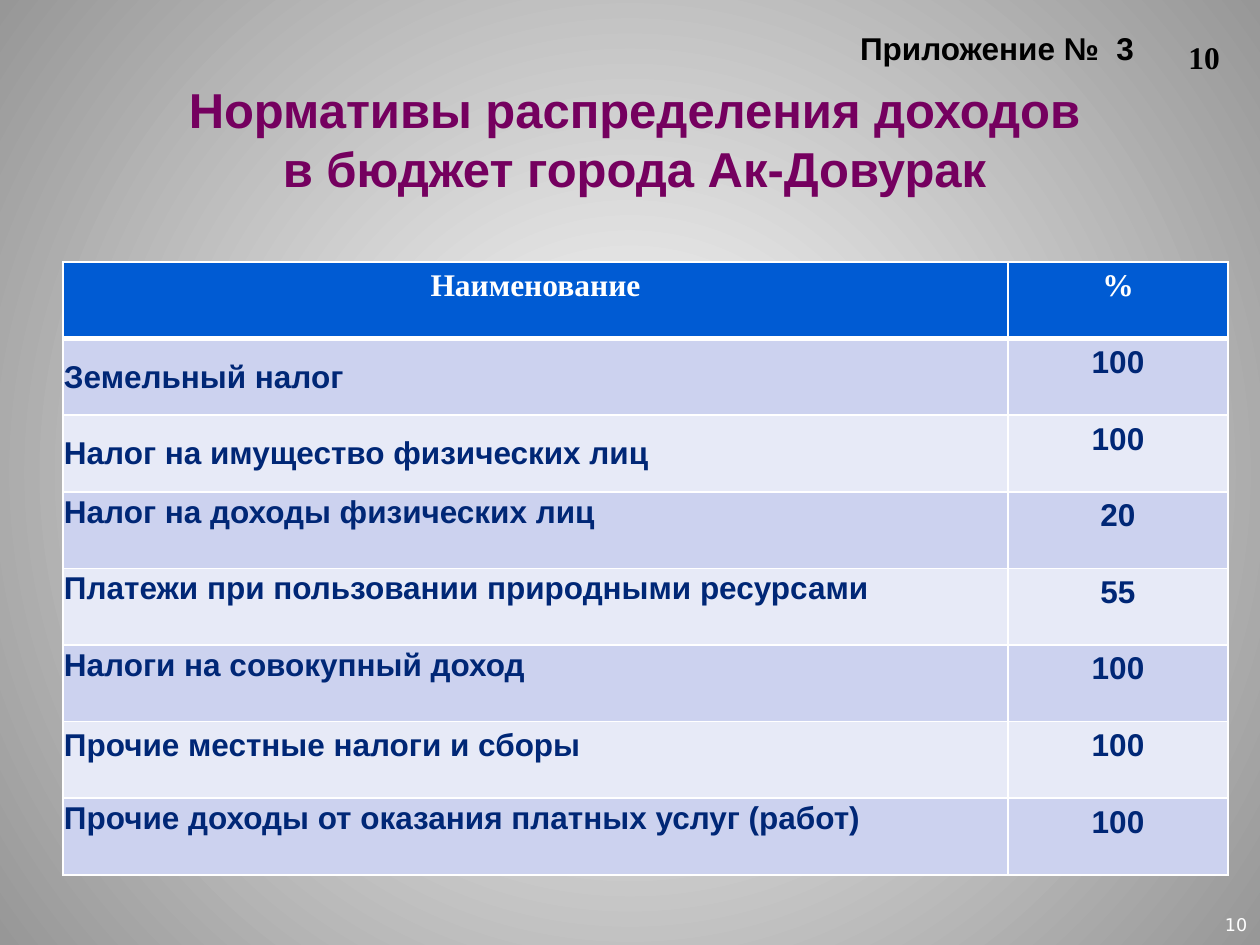
from lxml.etree import SubElement
from pptx import Presentation
from pptx.dml.color import RGBColor
from pptx.enum.text import MSO_ANCHOR, PP_ALIGN
from pptx.oxml import parse_xml
from pptx.oxml.ns import nsdecls, qn
from pptx.util import Emu, Pt

PX = 914400 / 126
BLACK = RGBColor(0x00, 0x00, 0x00)
WHITE = RGBColor(0xFF, 0xFF, 0xFF)
GRAY = RGBColor(0x97, 0x97, 0x97)
PLUM = RGBColor(0x75, 0x00, 0x5F)
NAVY = RGBColor(0x00, 0x27, 0x76)
BLUE = RGBColor(0x00, 0x5B, 0xD3)
BANDS = [RGBColor(0xCC, 0xD2, 0xEF), RGBColor(0xE7, 0xEA, 0xF7)]
MIDDLE, TOP = MSO_ANCHOR.MIDDLE, MSO_ANCHOR.TOP

HEADER = ("Наименование", "%")
INCOMES = [
    ("Земельный налог", "100", MIDDLE, 1),
    ("Налог на имущество физических лиц", "100", MIDDLE, 1),
    ("Налог на доходы физических лиц", "20", TOP, 3),
    ("Платежи при пользовании природными ресурсами", "55", TOP, 3),
    ("Налоги на совокупный доход", "100", TOP, 3),
    ("Прочие местные налоги и сборы", "100", TOP, 6),
    ("Прочие доходы от оказания платных услуг (работ)", "100", TOP, 3),
]


def px(n):
    """Convert pixels to EMU."""
    return Emu(round(n * PX))


def style(tf, font, size, color, align=PP_ALIGN.LEFT, bold=True):
    """Format the only paragraph of a text frame."""
    p = tf.paragraphs[0]
    p.alignment = align
    for r in p.runs:
        r.font.name, r.font.size, r.font.bold = font, Pt(size), bold
        r.font.color.rgb = color


def paint_background(s):
    """Fill the background with a gradient from the centre outwards."""
    fill = s.background.fill
    fill.gradient()
    for stop, color in zip(fill.gradient_stops, (WHITE, GRAY)):
        stop.color.rgb = color
    grad = next(s.element.iter(qn("a:gradFill")))
    grad.remove(grad.find(qn("a:lin")))
    circle = SubElement(grad, qn("a:path"), path="circle")
    SubElement(circle, qn("a:fillToRect"), l="50000", t="50000", r="50000", b="50000")


def add_text(s, box, text, font, size, color, align=PP_ALIGN.LEFT, bold=True, inset=True):
    """Add a wrapped text box, with or without default insets."""
    tf = s.shapes.add_textbox(*map(px, box)).text_frame
    tf.word_wrap = True
    if not inset:
        tf.margin_left = tf.margin_top = tf.margin_right = tf.margin_bottom = 0
    tf.text = text
    style(tf, font, size, color, align, bold)


def add_borders(cell, top, bottom):
    """Draw white lines around a cell with the given top and bottom widths."""
    tcPr = cell._tc.get_or_add_tcPr()
    for i, (side, width) in enumerate(zip("LRTB", (1, 1, top, bottom))):
        tcPr.insert(i, parse_xml(
            f'<a:ln{side} {nsdecls("a")} w="{Pt(width)}"><a:solidFill>'
            f'<a:srgbClr val="{WHITE}"/></a:solidFill></a:ln{side}>'))


def fill_cell(cell, text, font, color, fill, align, top=1, bottom=1):
    """Write one table cell with its fill and borders."""
    cell.text = text
    style(cell.text_frame, font, 18, color, align)
    cell.fill.solid()
    cell.fill.fore_color.rgb = fill
    add_borders(cell, top, bottom)


def add_income_table(s, box, value_width):
    """Add the table of income shares in the given box."""
    table = s.shapes.add_table(len(INCOMES) + 1, 2, *map(px, box)).table
    table.columns[0].width = px(box[2] - value_width)
    table.columns[1].width = px(value_width)
    for col, text in enumerate(HEADER):
        fill_cell(table.cell(0, col), text, "Times New Roman", WHITE, BLUE,
                  PP_ALIGN.CENTER, bottom=3)
    for row, (name, share, anchor, margin) in enumerate(INCOMES, 1):
        fill = BANDS[(row - 1) % 2]
        top = 3 if row == 1 else 1
        cell = table.cell(row, 0)
        fill_cell(cell, name, "Arial", NAVY, fill, PP_ALIGN.LEFT, top)
        cell.vertical_anchor = anchor
        cell.margin_left = cell.margin_right = px(1)
        cell.margin_top, cell.margin_bottom = px(margin), 0
        fill_cell(table.cell(row, 1), share, "Arial", NAVY, fill, PP_ALIGN.CENTER, top)


def main():
    """Build the slide and save it."""
    prs = Presentation()
    prs.slide_width, prs.slide_height = px(1260), px(945)
    s = prs.slides.add_slide(prs.slide_layouts[6])
    paint_background(s)
    add_text(s, (121, 29, 1013, 38), "Приложение №  3", "Arial", 18, BLACK,
             PP_ALIGN.RIGHT, inset=False)
    add_text(s, (1225, 914, 34, 21), "10", "DejaVu Sans", 10, WHITE,
             bold=False, inset=False)
    add_text(s, (157, 73, 955, 131),
             "Нормативы распределения доходов в бюджет города Ак-Довурак",
             "Arial", 28, PLUM, PP_ALIGN.CENTER)
    add_text(s, (1176, 32, 63, 53), "10", "Times New Roman", 18, BLACK)
    add_income_table(s, (63, 262, 1165, 613), 220)
    prs.save("out.pptx")


if __name__ == "__main__":
    main()
